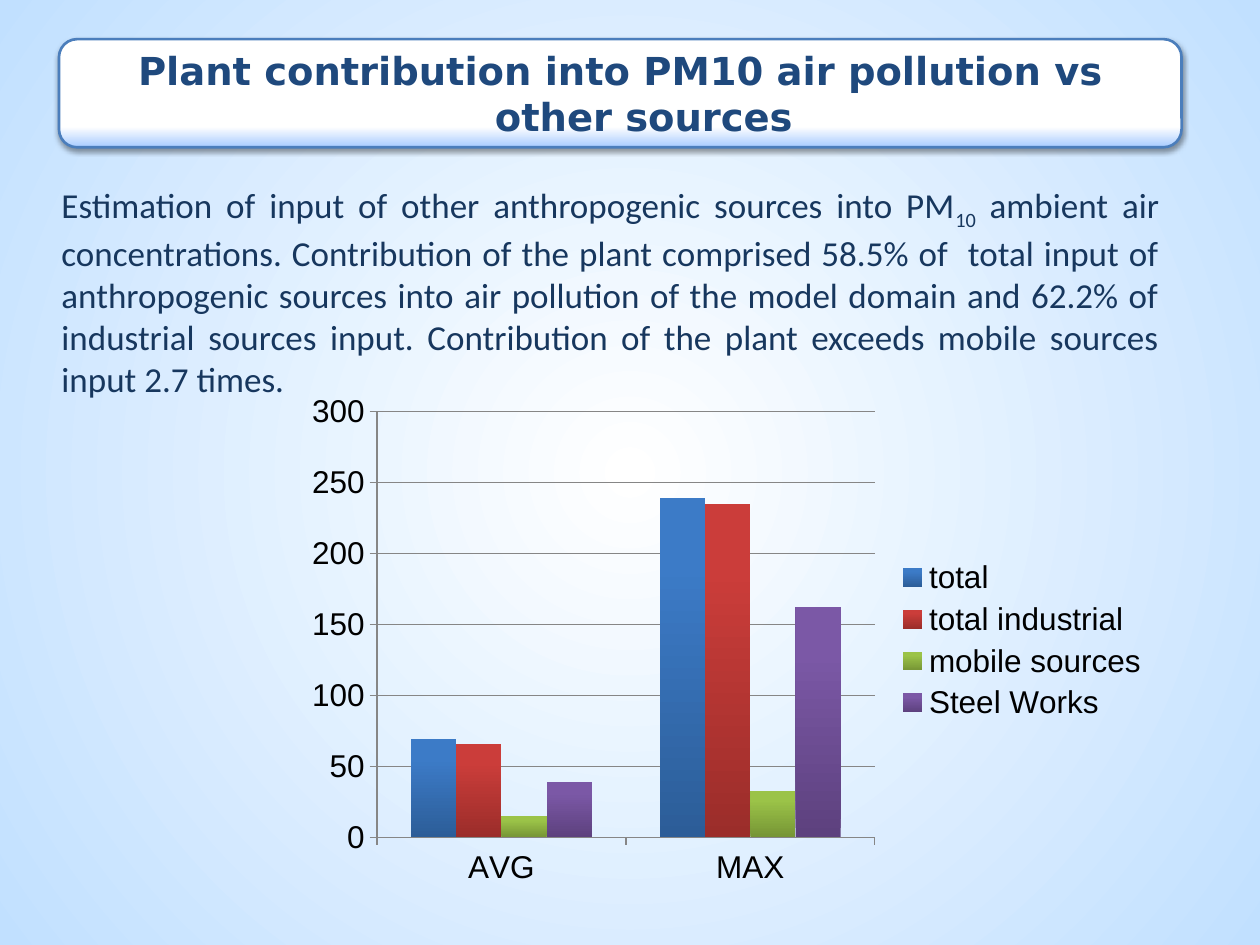
from lxml import etree
from pptx import Presentation
from pptx import util as u
from pptx.chart import data as chart_data
from pptx.dml import color
from pptx.enum import chart as charts, shapes, text
from pptx.oxml import parse_xml
from pptx.oxml.ns import nsdecls, qn

COLORS = {
    "white": "FFFFFF", "sky": "C1E0FF", "glow": "A7CBFF", "border": "4B7EBC",
    "title": "1F497D", "body": "17375E", "black": "000000", "grid": "868686",
}
# Name, AVG and MAX values, colour at the foot and at the top of the bars
SERIES = [
    ("total", (69, 239), "2C5D98", "3C7BC7"),
    ("total industrial", (66, 235), "9B2D2A", "CB3D3A"),
    ("mobile sources", (15, 33), "769535", "9BC348"),
    ("Steel Works", (39, 162), "5D417E", "7B58A6"),
]


def rgb(value):
    return color.RGBColor.from_string(value)


def apply(target, values):
    for name, value in values.items():
        setattr(target, name, value)


def fill_gradient(fill, stops, angle=90):
    fill.gradient()
    fill.gradient_angle = angle
    for stop, (position, value) in zip(fill.gradient_stops, stops):
        stop.position = position
        stop.color.rgb = rgb(value)


class SlideBuilder:
    """Holds the text styles and the slide being filled."""

    styles = {
        "title": ({"name": "DejaVu Sans", "size": u.Pt(22), "bold": True}, "title"),
        "body": ({"name": "Calibri", "size": u.Pt(20)}, "body"),
        "chart": ({"name": "Arial", "size": u.Pt(18)}, "black"),
    }

    def __init__(self, presentation):
        self.slide = presentation.slides.add_slide(presentation.slide_layouts[6])

    def style_font(self, font, style):
        values, color_name = self.styles[style]
        apply(font, values)
        font.color.rgb = rgb(COLORS[color_name])

    def background(self, inner, outer):
        """Radial gradient from the centre of the slide."""
        fill_gradient(self.slide.background.fill, [(0, inner), (1, outer)])
        linear = next(self.slide.element.iter(qn("a:lin")))
        linear.getparent().replace(linear, parse_xml(
            f'<a:path {nsdecls("a")} path="circle">'
            '<a:fillToRect l="50000" t="50000" r="50000" b="50000"/></a:path>'))

    def paragraph_box(self, box, parts):
        """Justified text; parts are (wording, baseline shift in percent)."""
        shape = self.slide.shapes.add_textbox(*map(u.Cm, box))
        apply(shape.text_frame, {"word_wrap": True,
                                 "auto_size": text.MSO_AUTO_SIZE.SHAPE_TO_FIT_TEXT})
        paragraph = shape.text_frame.paragraphs[0]
        paragraph.alignment = text.PP_ALIGN.JUSTIFY
        for wording, baseline in parts:
            run = paragraph.add_run()
            run.text = wording
            self.style_font(run.font, "body")
            if baseline:
                run._r.get_or_add_rPr().set("baseline", str(baseline * 1000))

    def title_panel(self, box, wording):
        shape = self.slide.shapes.add_shape(
            shapes.MSO_SHAPE.ROUNDED_RECTANGLE, *map(u.Cm, box))
        fill_gradient(shape.fill, [(0, COLORS["glow"]), (0.19, COLORS["white"])])
        shape.line.color.rgb = rgb(COLORS["border"])
        shape.line.width = u.Pt(1.5)
        shape.shadow.inherit = False
        shadow = etree.SubElement(
            shape.element.spPr.find(qn("a:effectLst")), qn("a:outerShdw"),
            blurRad=str(u.Pt(3.1)), dist=str(u.Pt(1.6)), dir="5400000", rotWithShape="0")
        shade = etree.SubElement(shadow, qn("a:srgbClr"), val=COLORS["black"])
        etree.SubElement(shade, qn("a:alpha"), val="38000")

        apply(shape.text_frame, {"word_wrap": True,
                                 "vertical_anchor": text.MSO_ANCHOR.MIDDLE})
        paragraph = shape.text_frame.paragraphs[0]
        apply(paragraph, {"alignment": text.PP_ALIGN.CENTER, "space_before": u.Pt(4.4)})
        indent = u.Cm(0.95)
        properties = paragraph._p.get_or_add_pPr()
        properties.set("marL", str(indent))
        properties.set("indent", str(-indent))
        run = paragraph.add_run()
        run.text = wording
        self.style_font(run.font, "title")

    def column_chart(self, box, categories, series_rows, layout):
        """Clustered columns; layout is the inner plot area as fractions."""
        data = chart_data.CategoryChartData(number_format="0")
        data.categories = categories
        for name, values, _, _ in series_rows:
            data.add_series(name, values)
        chart = self.slide.shapes.add_chart(
            charts.XL_CHART_TYPE.COLUMN_CLUSTERED, *map(u.Cm, box), data).chart
        self.style_font(chart.font, "chart")
        apply(chart, {"has_title": False, "has_legend": True})
        apply(chart.legend, {"position": charts.XL_LEGEND_POSITION.RIGHT,
                             "include_in_layout": False})
        plot = chart.plots[0]
        apply(plot, {"gap_width": 150, "overlap": 0, "vary_by_categories": False})
        for series, (_, _, foot, top) in zip(plot.series, series_rows):
            fill_gradient(series.format.fill, [(0, foot), (0.8, top)])
            series.invert_if_negative = False

        apply(chart.value_axis, {"minimum_scale": 0, "maximum_scale": 300,
                                 "major_unit": 50, "has_major_gridlines": True})
        for axis in (chart.category_axis, chart.value_axis):
            axis.major_tick_mark = charts.XL_TICK_MARK.OUTSIDE
        for part in (chart.category_axis, chart.value_axis,
                     chart.value_axis.major_gridlines):
            part.format.line.color.rgb = rgb(COLORS["grid"])
            part.format.line.width = u.Pt(0.75)

        plot_area = next(chart.element.iter(qn("c:plotArea")))
        for old in plot_area.findall(qn("c:layout")):
            plot_area.remove(old)
        fractions = "".join(f'<c:{key} val="{value}"/>' for key, value in layout.items())
        plot_area.insert(0, parse_xml(
            f'<c:layout {nsdecls("c")}><c:manualLayout><c:layoutTarget val="inner"/>'
            '<c:xMode val="edge"/><c:yMode val="edge"/>'
            f'{fractions}</c:manualLayout></c:layout>'))


def main():
    presentation = Presentation()
    apply(presentation, {"slide_width": u.Cm(25.4), "slide_height": u.Cm(19.05)})
    builder = SlideBuilder(presentation)
    builder.background(COLORS["white"], COLORS["sky"])
    builder.paragraph_box((0.99, 3.58, 22.63, 4.52), [
        ("Estimation of input of other anthropogenic sources into PM", 0),
        ("10", -25),
        (" ambient air concentrations. Contribution of the plant comprised 58.5% of  "
         "total input of anthropogenic sources into air pollution of the model domain "
         "and 62.2% of industrial sources input. Contribution of the plant exceeds "
         "mobile sources input 2.7 times.", 0),
    ])
    builder.title_panel((1.19, 0.79, 22.63, 2.18),
                        "Plant contribution into PM10 air pollution vs other sources")
    builder.column_chart((5.94, 7.75, 17.48, 10.31), ("AVG", "MAX"), SERIES,
                         {"x": 0.095, "y": 0.053, "w": 0.574, "h": 0.833})
    presentation.save("out.pptx")


if __name__ == "__main__":
    main()
